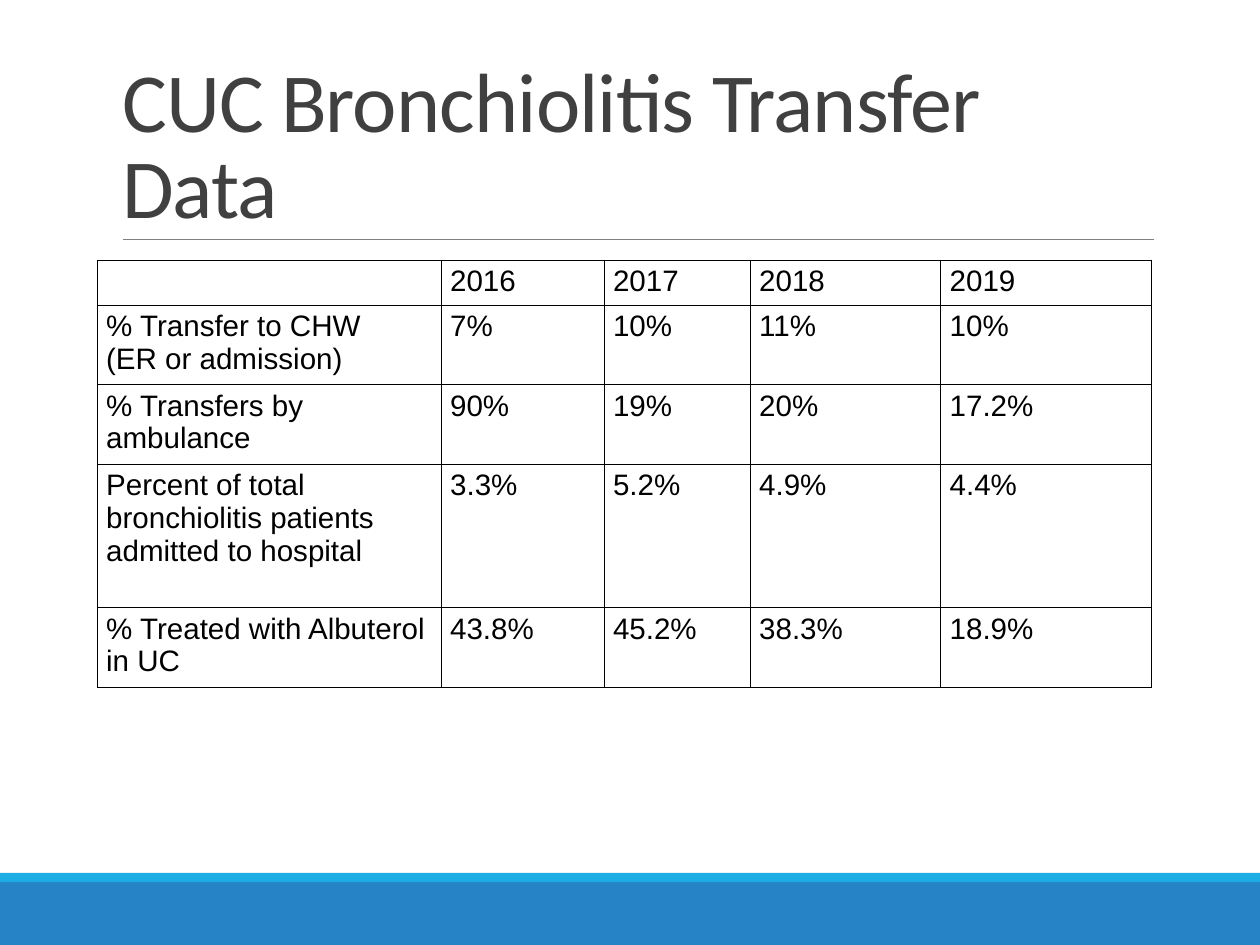
from dataclasses import dataclass

from lxml.etree import SubElement
from pptx import Presentation
from pptx.dml.color import RGBColor
from pptx.enum.shapes import MSO_CONNECTOR, MSO_SHAPE
from pptx.enum.text import MSO_ANCHOR, PP_ALIGN
from pptx.oxml.ns import qn
from pptx.slide import Slide
from pptx.table import _Cell
from pptx.util import Cm, Pt

SLIDE_WIDTH = 36.12
SLIDE_HEIGHT = 27.1
COLUMN_WIDTHS = [9.86, 4.67, 4.19, 5.46, 6.05]


@dataclass
class Band:
    top: float
    height: float
    color: str


@dataclass
class TableRow:
    height: float
    values: list[str]


FOOTER_BANDS = [
    Band(25.3, 1.8, "2683C6"),
    Band(25.03, 0.27, "1CADE4"),
]

TRANSFER_ROWS = [
    TableRow(1.29, ["", "2016", "2017", "2018", "2019"]),
    TableRow(2.24, ["% Transfer to CHW\n(ER or admission)", "7%", "10%", "11%", "10%"]),
    TableRow(2.14, ["% Transfers by ambulance", "90%", "19%", "20%", "17.2%"]),
    TableRow(4.11, ["Percent of total bronchiolitis patients admitted to hospital",
                    "3.3%", "5.2%", "4.9%", "4.4%"]),
    TableRow(2.15, ["% Treated with Albuterol in UC", "43.8%", "45.2%", "38.3%", "18.9%"]),
]


def rgb(color: str) -> RGBColor:
    return RGBColor.from_string(color)


def add_band(slide: Slide, band: Band) -> None:
    shape = slide.shapes.add_shape(
        MSO_SHAPE.RECTANGLE, Cm(0), Cm(band.top), Cm(SLIDE_WIDTH), Cm(band.height))
    shape.shadow.inherit = False
    shape.fill.solid()
    shape.fill.fore_color.rgb = rgb(band.color)
    shape.line.fill.background()


def add_title_rule(slide: Slide) -> None:
    connector = slide.shapes.add_connector(
        MSO_CONNECTOR.STRAIGHT, Cm(3.53), Cm(6.86), Cm(33.07), Cm(6.86))
    connector.line.color.rgb = rgb("808080")
    connector.line.width = Pt(0.5)
    SubElement(connector._element.spPr, qn("a:effectLst"))


def add_title(slide: Slide, text: str) -> None:
    title = slide.shapes.add_textbox(Cm(3.25), Cm(1.14), Cm(29.5), Cm(5.74))
    text_frame = title.text_frame
    text_frame.word_wrap = True
    text_frame.vertical_anchor = MSO_ANCHOR.BOTTOM
    text_frame.text = text
    paragraph = text_frame.paragraphs[0]
    paragraph.line_spacing = 0.85
    run = paragraph.runs[0]
    run.font.name = "Calibri"
    run.font.size = Pt(68.3)
    run.font.color.rgb = rgb("404040")
    run._r.get_or_add_rPr().set("spc", "-70")


def add_borders(cell: _Cell, color: str) -> None:
    properties = cell._tc.get_or_add_tcPr()
    for side in ("lnL", "lnR", "lnT", "lnB"):
        border = SubElement(properties, qn(f"a:{side}"), w=str(Pt(1)))
        fill = SubElement(border, qn("a:solidFill"))
        SubElement(fill, qn("a:srgbClr"), val=color)


def format_cell(cell: _Cell, text: str) -> None:
    add_borders(cell, "000000")
    cell.fill.background()
    cell.text_frame.text = text
    for paragraph in cell.text_frame.paragraphs:
        paragraph.alignment = PP_ALIGN.LEFT
        for run in paragraph.runs:
            run.font.name = "Arial"
            run.font.size = Pt(24)
            run.font.bold = False
            run.font.color.rgb = rgb("000000")


def add_transfer_table(slide: Slide, rows: list[TableRow]) -> None:
    frame = slide.shapes.add_table(
        len(rows), len(COLUMN_WIDTHS), Cm(2.79), Cm(7.46),
        Cm(sum(COLUMN_WIDTHS)), Cm(sum(row.height for row in rows)))
    table = frame.table
    table.first_row = False
    table.horz_banding = False
    for column, width in zip(table.columns, COLUMN_WIDTHS):
        column.width = Cm(width)
    for table_row, row in zip(table.rows, rows):
        table_row.height = Cm(row.height)
        for cell, value in zip(table_row.cells, row.values):
            format_cell(cell, value)


def main() -> None:
    presentation = Presentation()
    presentation.slide_width = Cm(SLIDE_WIDTH)
    presentation.slide_height = Cm(SLIDE_HEIGHT)
    slide = presentation.slides.add_slide(presentation.slide_layouts[6])
    for band in FOOTER_BANDS:
        add_band(slide, band)
    add_title_rule(slide)
    add_title(slide, "CUC Bronchiolitis Transfer Data")
    add_transfer_table(slide, TRANSFER_ROWS)
    presentation.save("out.pptx")


if __name__ == "__main__":
    main()
